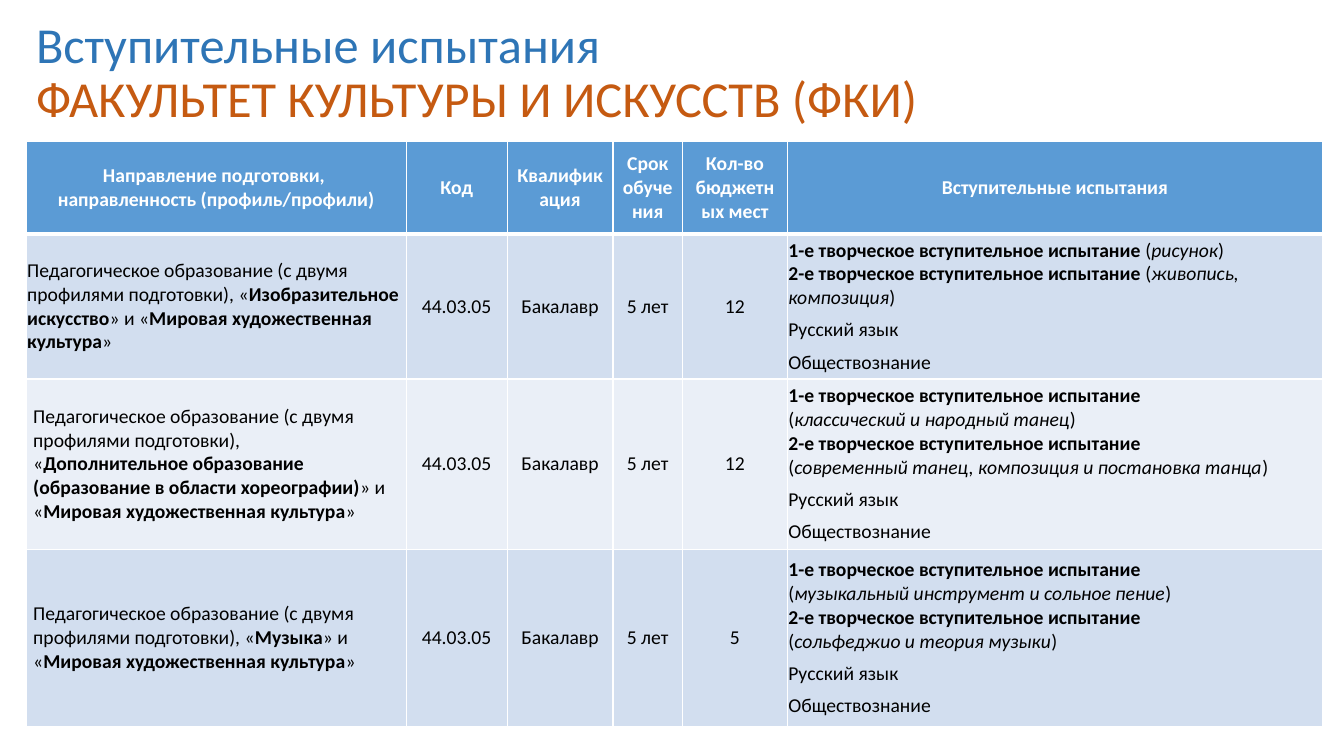
from lxml import etree
from pptx import Presentation
from pptx.dml import color
from pptx.enum import text
from pptx.oxml import ns
from pptx.util import Inches, Pt

COLORS = {"blue": "2E75B6", "orange": "C55A11", "header": "5B9BD5", "odd": "D2DEEF",
          "even": "EAEFF7", "white": "FFFFFF", "black": "000000"}
FONT = "Calibri"
COLUMN_WIDTHS = [3.77, 1, 1.05, 0.69, 1.04, 5.31]
ROW_HEIGHTS = [0.92, 1.44, 1.69, 1.76]
HEADERS = [
    ["Направление подготовки, ", "направленность (профиль/профили)"],
    ["Код"], ["Квалификация"], ["Срок обучения"], ["Кол-во бюджетных мест"],
    ["Вступительные испытания"],
]
EXAM = "*{}-е творческое вступительное испытание*"
PROGRAMS = [
    ("*Изобразительное искусство*", "12", " ", "рисунок", "живопись, композиция"),
    ("*Дополнительное образование (образование в области хореографии)*", "12", "\n",
     "классический и народный танец", "современный танец, композиция и постановка танца"),
    ("*Музыка*", "5", "\n",
     "музыкальный инструмент и сольное пение", "сольфеджио и теория музыки"),
]


def rgb(name):
    return color.RGBColor.from_string(COLORS[name])


def apply(target, formats):
    for name, value in formats.items():
        setattr(target, name, value)


def add_run(paragraph, content, color_name, **formats):
    run = paragraph.add_run()
    run.text = content
    apply(run.font, {"name": FONT, **formats})
    run.font.color.rgb = rgb(color_name)


def add_marked_text(paragraph, content, color_name, size):
    for line_index, line in enumerate(content.split("\n")):
        if line_index:
            paragraph.add_line_break()
        for bold_index, part in enumerate(line.split("*")):
            for italic_index, piece in enumerate(part.split("_")):
                if piece:
                    add_run(paragraph, piece, color_name, size=size,
                            bold=bold_index % 2 == 1, italic=italic_index % 2 == 1)


def add_title(slide):
    box = slide.shapes.add_textbox(Inches(0.26), Inches(0.37), Inches(12.16), Inches(0.73))
    frame = box.text_frame
    apply(frame, {"word_wrap": True, "vertical_anchor": text.MSO_ANCHOR.MIDDLE})
    paragraph = frame.paragraphs[0]
    paragraph.line_spacing = 0.9
    add_run(paragraph, "Вступительные испытания", "blue", size=Pt(36))
    paragraph.add_line_break()
    add_run(paragraph, "ФАКУЛЬТЕТ КУЛЬТУРЫ И ИСКУССТВ (ФКИ)", "orange", size=Pt(36))


def set_borders(cell, widths):
    properties = cell._tc.get_or_add_tcPr()
    for index, (side, width) in enumerate(widths.items()):
        line = etree.Element(ns.qn(f"a:ln{side}"), w=str(Pt(width)))
        fill = etree.SubElement(line, ns.qn("a:solidFill"))
        etree.SubElement(fill, ns.qn("a:srgbClr"), val=COLORS["white"])
        properties.insert(index, line)


def fill_cell(cell, paragraphs, fill, color_name, margin, align, space_after):
    apply(cell, {"margin_left": Inches(margin), "margin_right": Inches(margin),
                 "margin_top": 0, "margin_bottom": 0,
                 "vertical_anchor": text.MSO_ANCHOR.MIDDLE})
    cell.fill.solid()
    cell.fill.fore_color.rgb = rgb(fill)
    frame = cell.text_frame
    for index, content in enumerate(paragraphs):
        paragraph = frame.add_paragraph() if index else frame.paragraphs[0]
        apply(paragraph, {"alignment": align, "space_after": Pt(space_after)})
        add_marked_text(paragraph, content, color_name, Pt(14))


def program_cells(profile, places, separator, first, second):
    exams = "\n".join(f"{EXAM.format(number)}{separator}(_{topic}_)"
                      for number, topic in enumerate((first, second), 1))
    direction = ("Педагогическое образование (с двумя профилями подготовки), "
                 f"«{profile}» и «*Мировая художественная культура*»")
    return [[direction], ["44.03.05"], ["Бакалавр"], ["5 лет"], [places],
            [exams, "Русский язык", "Обществознание"]]


def add_program_table(slide):
    rows = [HEADERS] + [program_cells(*program) for program in PROGRAMS]
    table = slide.shapes.add_table(
        len(rows), len(COLUMN_WIDTHS), Inches(0.26), Inches(1.4),
        Inches(sum(COLUMN_WIDTHS)), Inches(sum(ROW_HEIGHTS))).table
    for column, width in zip(table.columns, COLUMN_WIDTHS):
        column.width = Inches(width)
    for row, height in zip(table.rows, ROW_HEIGHTS):
        row.height = Inches(height)
    last = len(COLUMN_WIDTHS) - 1
    for row_index, row in enumerate(rows):
        header = row_index == 0
        fill = "header" if header else "odd" if row_index % 2 else "even"
        for column_index, paragraphs in enumerate(row):
            cell = table.cell(row_index, column_index)
            exams = not header and column_index == last
            centred = header or 0 < column_index < last
            fill_cell(
                cell, [f"*{line}*" for line in paragraphs] if header else paragraphs,
                fill, "white" if header else "black",
                0.01 if exams or row_index == 1 else 0.07,
                text.PP_ALIGN.CENTER if centred else text.PP_ALIGN.LEFT,
                6 if exams else 0)
            set_borders(cell, {"L": 1, "R": 1, "T": 3 if row_index == 1 else 1,
                               "B": 3 if header else 1})


def main():
    presentation = Presentation()
    apply(presentation, {"slide_width": Inches(13.33), "slide_height": Inches(7.5)})
    slide = presentation.slides.add_slide(presentation.slide_layouts[6])
    add_title(slide)
    add_program_table(slide)
    presentation.save("out.pptx")


if __name__ == "__main__":
    main()
